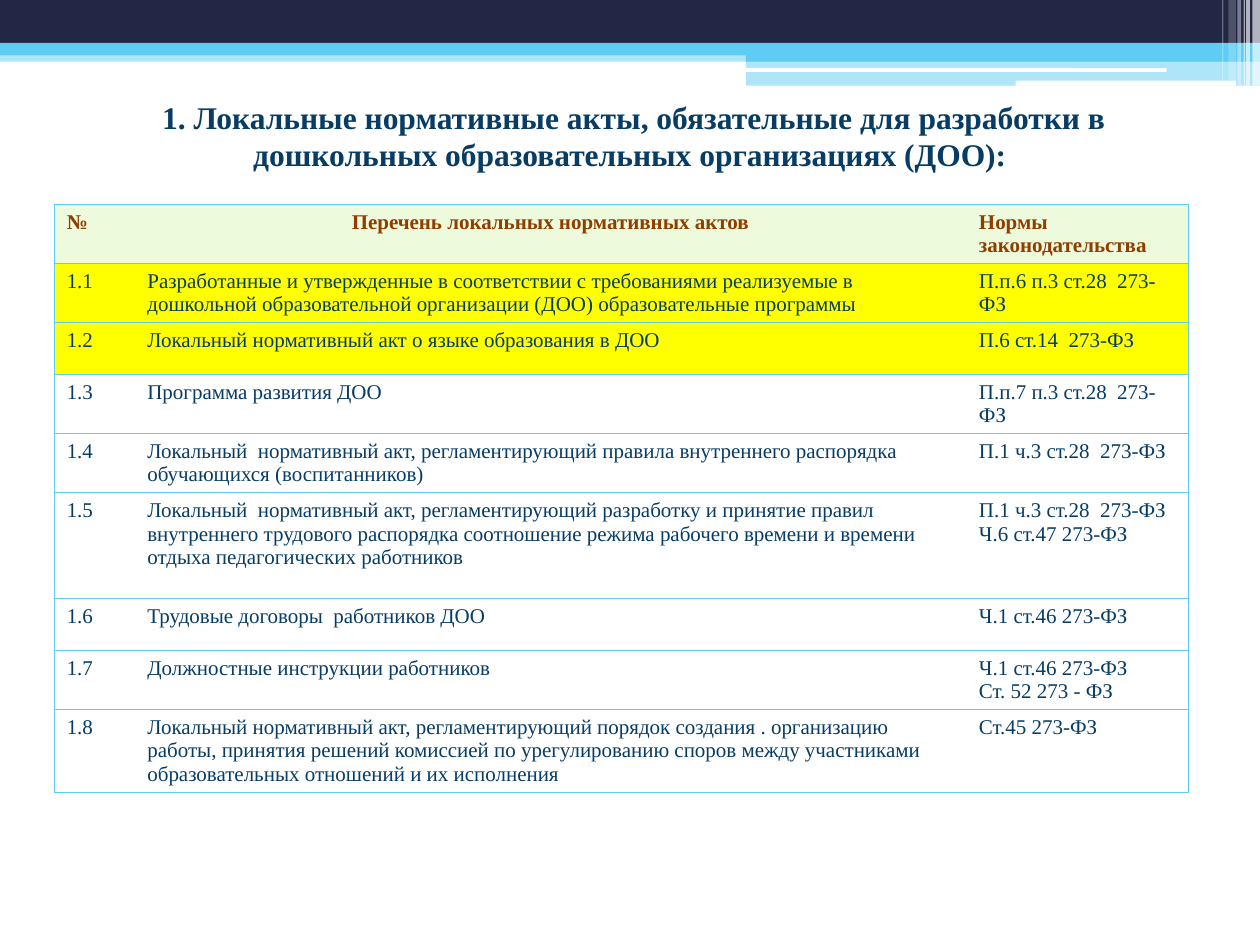
from typing import NamedTuple, Optional

from lxml.etree import SubElement
from pptx import Presentation
from pptx.dml.color import RGBColor
from pptx.enum.shapes import MSO_SHAPE
from pptx.enum.text import MSO_ANCHOR, PP_ALIGN
from pptx.oxml.ns import qn
from pptx.util import Inches, Pt

NAVY = RGBColor(0x21, 0x27, 0x45)
SKY = RGBColor(0x5E, 0xCC, 0xF3)
WHITE = RGBColor(0xFF, 0xFF, 0xFF)
INK = RGBColor(0x07, 0x3C, 0x65)
BROWN = RGBColor(0x90, 0x3E, 0x00)
PALE_GREEN = RGBColor(0xED, 0xFB, 0xDC)
YELLOW = RGBColor(0xFF, 0xFF, 0x00)

FONT = "Times New Roman"
COLUMNS, ROWS = 100, 75  # the slide's grid
SLIDE_WIDTH, SLIDE_HEIGHT = Inches(10), Inches(7.5)
NO_GRID_STYLE = "{2D5ABB26-0587-4C30-8999-92F81FD0307C}"


class Band(NamedTuple):
    left: float
    top: float
    width: float
    height: float
    color: RGBColor
    opacity: int = 100
    rounded: bool = False


class Act(NamedTuple):
    number: str
    name: str
    law: str
    fill: Optional[RGBColor] = None
    height: float = 4.1


BANDS = [
    Band(0, 4, 100, 0.9, SKY, 50),
    Band(0, 0, 100, 3.4, NAVY),
    Band(0, 3.4, 100, 1, SKY),
    Band(59.2, 3.9, 40.8, 1, SKY),
    Band(59.2, 4.8, 40.8, 2, SKY, 50),
    Band(59.1, 5.4, 33.5, 0.3, WHITE, rounded=True),
    Band(80.6, 6.4, 17.5, 0.4, WHITE, rounded=True),
    Band(99.4, 0, 0.6, 6.8, WHITE, 65),
    Band(98.9, 0, 0.3, 6.8, WHITE, 65),
    Band(98.7, 0, 0.1, 6.8, WHITE, 60),
    Band(98.2, 0, 0.3, 6.8, WHITE, 40),
    Band(97.5, 0, 0.6, 6.4, WHITE, 20),
    Band(97, 0, 0.1, 6.4, WHITE, 30),
]

TITLE = (" 1. Локальные нормативные акты, обязательные для разработки в "
         "дошкольных образовательных организациях (ДОО):")

COLUMN_WIDTHS = (6.4, 66, 17.6)
ACTS = [
    Act("№", "Перечень локальных нормативных актов", "Нормы законодательства", PALE_GREEN),
    Act("1.1", "Разработанные и утвержденные в соответствии с требованиями реализуемые в "
        "дошкольной образовательной организации (ДОО) образовательные программы",
        "П.п.6 п.3 ст.28  273-ФЗ", YELLOW),
    Act("1.2", "Локальный нормативный акт о языке образования в ДОО",
        "П.6 ст.14  273-ФЗ", YELLOW),
    Act("1.3", "Программа развития ДОО", "П.п.7 п.3 ст.28  273-ФЗ"),
    Act("1.4", "Локальный  нормативный акт, регламентирующий правила внутреннего "
        "распорядка обучающихся (воспитанников)", "П.1 ч.3 ст.28  273-ФЗ"),
    Act("1.5", "Локальный  нормативный акт, регламентирующий разработку и принятие правил "
        "внутреннего трудового распорядка соотношение режима рабочего времени и времени "
        "отдыха педагогических работников",
        "П.1 ч.3 ст.28  273-ФЗ\nЧ.6 ст.47 273-ФЗ", height=8.4),
    Act("1.6", "Трудовые договоры  работников ДОО", "Ч.1 ст.46 273-ФЗ"),
    Act("1.7", "Должностные инструкции работников", "Ч.1 ст.46 273-ФЗ\nСт. 52 273 - ФЗ"),
    Act("1.8", "Локальный нормативный акт, регламентирующий порядок создания . организацию "
        "работы, принятия решений комиссией по урегулированию споров между участниками "
        "образовательных отношений и их исполнения", "Ст.45 273-ФЗ"),
]


def across(columns: float) -> int:
    return round(SLIDE_WIDTH * columns / COLUMNS)


def down(rows: float) -> int:
    return round(SLIDE_HEIGHT * rows / ROWS)


def write(frame, text: str, *, size: float = 12, color: RGBColor = INK,
          bold: bool = False, align=PP_ALIGN.LEFT) -> None:
    """Fill a text frame with one paragraph for each line of text."""
    frame.text = text
    for paragraph in frame.paragraphs:
        paragraph.alignment = align
        for run in paragraph.runs:
            run.font.name = FONT
            run.font.size = Pt(size)
            run.font.bold = bold
            run.font.color.rgb = color


def draw_band(slide, band: Band) -> None:
    kind = MSO_SHAPE.ROUNDED_RECTANGLE if band.rounded else MSO_SHAPE.RECTANGLE
    shape = slide.shapes.add_shape(kind, across(band.left), down(band.top),
                                   across(band.width), down(band.height))
    shape.shadow.inherit = False
    shape.line.fill.background()
    shape.fill.solid()
    shape.fill.fore_color.rgb = band.color
    if band.opacity < 100:
        color = shape.fill._xPr.find(".//" + qn("a:srgbClr"))
        SubElement(color, qn("a:alpha"), val=str(band.opacity * 1000))


def draw_title(slide) -> None:
    title = slide.shapes.title
    title.left, title.top = across(5), down(6.8)
    title.width, title.height = across(90), down(7.9)
    title.text_frame.word_wrap = True
    title.text_frame.vertical_anchor = MSO_ANCHOR.MIDDLE
    write(title.text_frame, TITLE, size=18, bold=True, align=PP_ALIGN.CENTER)


def set_borders(cell, sides: list[str]) -> None:
    """Draw the named sides; they precede the fill in the cell's properties."""
    properties = cell._tc.get_or_add_tcPr()
    for position, side in enumerate(sides):
        line = SubElement(properties, qn(f"a:ln{side}"), w=str(Pt(0.75)))
        fill = SubElement(line, qn("a:solidFill"))
        SubElement(fill, qn("a:srgbClr"), val=str(SKY))
        properties.insert(position, line)


def draw_table(slide) -> None:
    frame = slide.shapes.add_table(
        len(ACTS), len(COLUMN_WIDTHS), across(4.3), down(16.2),
        across(sum(COLUMN_WIDTHS)), down(sum(act.height for act in ACTS)))
    table = frame.table
    table.horz_banding = False
    table._tbl.tblPr.find(qn("a:tableStyleId")).text = NO_GRID_STYLE
    for column, width in zip(table.columns, COLUMN_WIDTHS):
        column.width = across(width)

    last = len(COLUMN_WIDTHS) - 1
    for row_index, act in enumerate(ACTS):
        header = row_index == 0
        table.rows[row_index].height = down(act.height)
        for column_index, text in enumerate((act.number, act.name, act.law)):
            cell = table.cell(row_index, column_index)
            centred = header and column_index == 1
            write(cell.text_frame, text, bold=header, color=BROWN if header else INK,
                  align=PP_ALIGN.CENTER if centred else PP_ALIGN.LEFT)
            if act.fill is None:
                cell.fill.background()
            else:
                cell.fill.solid()
                cell.fill.fore_color.rgb = act.fill
            outer = {0: ["L"], last: ["R"]}.get(column_index, [])
            set_borders(cell, outer + ["T", "B"])


def main() -> None:
    presentation = Presentation()
    presentation.slide_width, presentation.slide_height = SLIDE_WIDTH, SLIDE_HEIGHT
    slide = presentation.slides.add_slide(presentation.slide_layouts[5])
    for band in BANDS:
        draw_band(slide, band)
    draw_title(slide)
    draw_table(slide)
    presentation.save("out.pptx")


if __name__ == "__main__":
    main()
